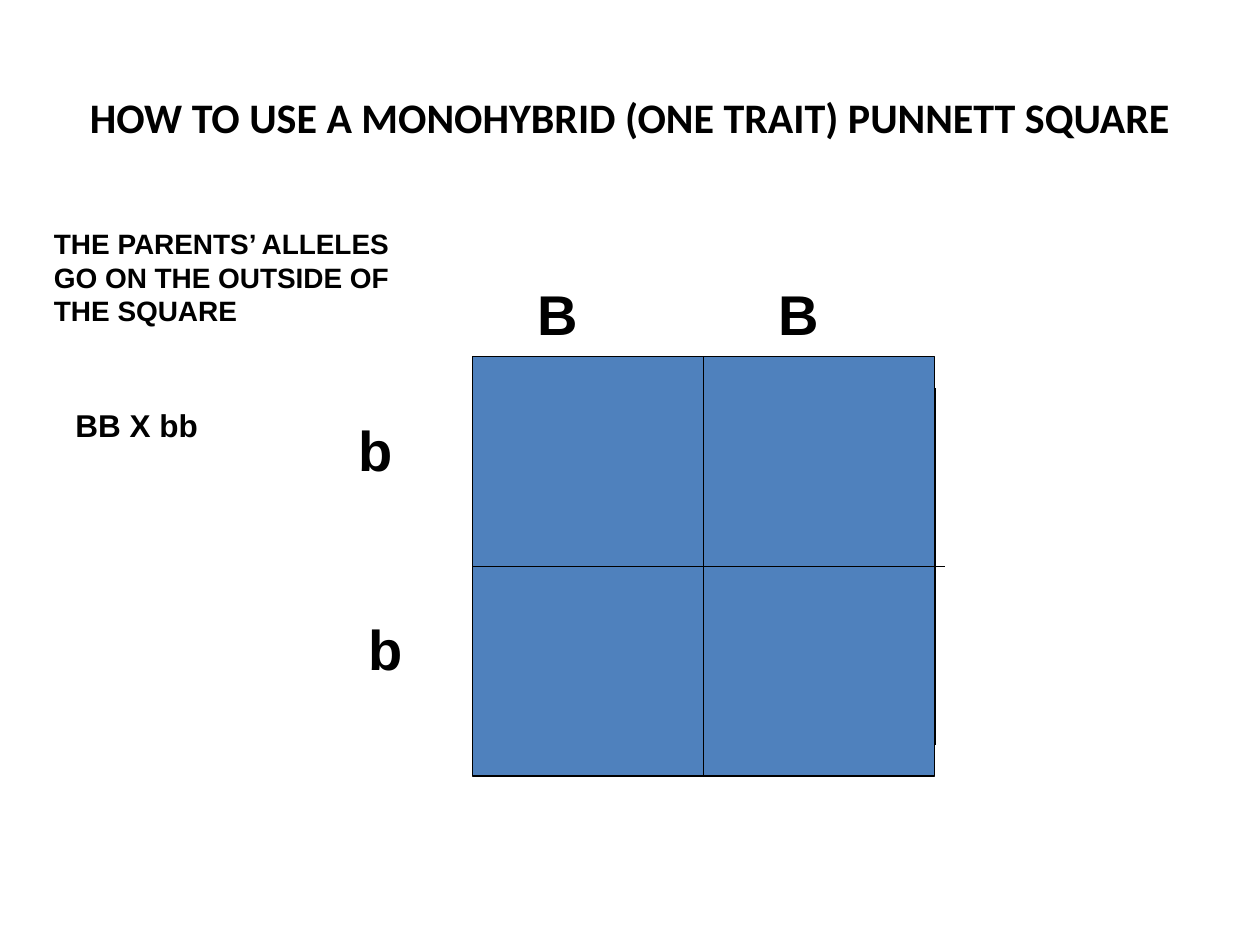
import pptx
import pptx.dml.color
import pptx.enum.shapes
import pptx.enum.text
import pptx.oxml
import pptx.oxml.ns
import pptx.util

Inches = pptx.util.Inches
Pt = pptx.util.Pt
Align = pptx.enum.text.PP_ALIGN
Anchor = pptx.enum.text.MSO_ANCHOR
BLACK = pptx.dml.color.RGBColor(0x00, 0x00, 0x00)
BLUE = pptx.dml.color.RGBColor(0x4F, 0x81, 0xBD)


class Board:
    """Hold the style and the current slide, and draw each kind of element."""

    def __init__(self, slide):
        self.shapes = slide.shapes
        self.font = {"name": "Arial", "bold": True}
        self.width = Pt(0.75)

    def ink(self, line):
        line.color.rgb = BLACK
        line.width = self.width

    def text(self, words, box, size, align=Align.LEFT, anchor=Anchor.TOP, lead=0.125, **style):
        frame = self.shapes.add_textbox(*map(Inches, box)).text_frame
        frame.word_wrap = True
        frame.vertical_anchor = anchor
        para = frame.paragraphs[0]
        para.alignment = align
        para.space_before = Pt(size * lead)
        run = para.add_run()
        run.text = words
        for key, value in {**self.font, "size": Pt(size), **style}.items():
            setattr(run.font, key, value)
        run.font.color.rgb = BLACK

    def rect(self, box):
        kind = pptx.enum.shapes.MSO_SHAPE.RECTANGLE
        shape = self.shapes.add_shape(kind, *map(Inches, box))
        shape.shadow.inherit = False
        shape.fill.solid()
        shape.fill.fore_color.rgb = BLUE
        self.ink(shape.line)

    def line(self, *ends):
        kind = pptx.enum.shapes.MSO_CONNECTOR.STRAIGHT
        rule = self.shapes.add_connector(kind, *map(Inches, ends))
        self.ink(rule.line)
        flat = pptx.oxml.parse_xml(f"<a:effectLst {pptx.oxml.ns.nsdecls('a')}/>")
        rule._element.spPr.append(flat)


def main():
    deck = pptx.Presentation()
    deck.slide_width, deck.slide_height = Inches(10), Inches(7.5)
    board = Board(deck.slides.add_slide(deck.slide_layouts[6]))

    board.text("HOW TO USE A MONOHYBRID (ONE TRAIT) PUNNETT SQUARE",
               (0.5, 0.3, 9, 1.25), 24, Align.CENTER, Anchor.MIDDLE, 0, name="Calibri")

    left, top, wide, high = 3.75, 2.83, 3.67, 3.33
    right, base = left + wide, top + high
    board.rect((left, top, wide, high))
    board.line(left + wide / 2, top, left + wide / 2, base)
    board.line(left, top + high / 2, 7.5, top + high / 2)
    board.line(right, base - 0.25, right, top + 0.25)

    board.text("THE PARENTS’ ALLELES GO ON THE OUTSIDE OF THE SQUARE",
               (0.33, 1.75, 2.92, 0.9), 16)
    for gene, x, y, span in (("B", 4.17, 2.17, 0.92), ("B", 6.08, 2.17, 0.67),
                             ("b", 2.75, 3.25, 0.75), ("b", 2.83, 4.83, 0.42)):
        board.text(gene, (x, y, span, 0.63), 32)
    board.text("BB X bb", (0.5, 3.17, 1.42, 0.4), 18)
    deck.save("out.pptx")


if __name__ == "__main__":
    main()
